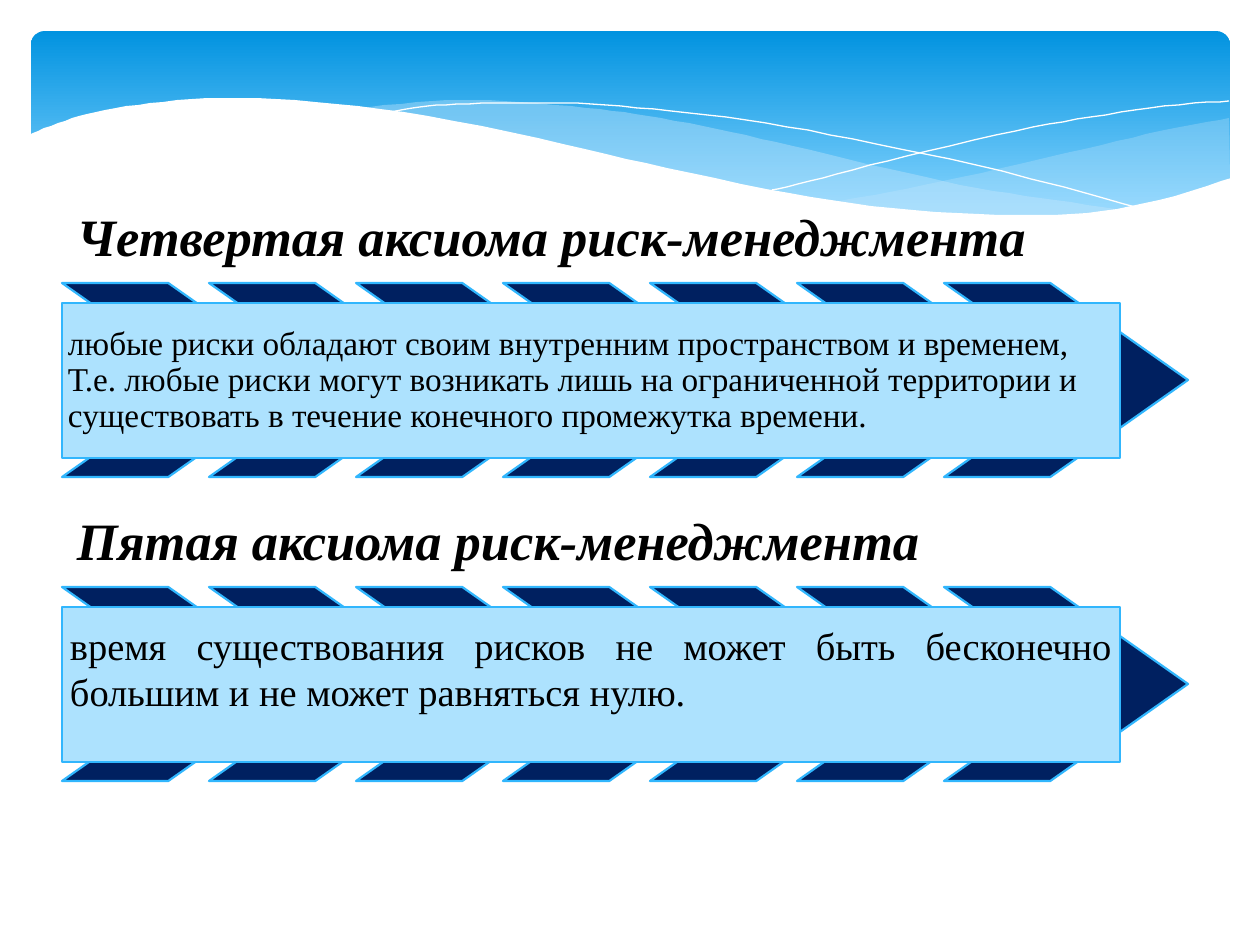
from lxml.etree import SubElement
from pptx import Presentation
from pptx.dml.color import RGBColor
from pptx.enum.shapes import MSO_SHAPE as Shape
from pptx.enum.text import MSO_ANCHOR as Anchor, PP_ALIGN as Align
from pptx.oxml.ns import qn
from pptx.util import Pt

EMU_PER_PX = 914400 / 126
FONT = "Times New Roman"
COLORS = {
    "sky_top": "0293E0", "sky_bottom": "83D3FE", "wave": "C6E7FC",
    "white": "FFFFFF", "black": "000000", "navy": "002060",
    "panel": "ADE2FE", "outline": "31B6FD",
}

# Key points of the header curves, in px from the slide's top left corner
RIGHT_WAVE_TOP = [(1229, 118), (1160, 131), (1085, 149), (982, 173), (890, 192), (833, 202)]
RIGHT_WAVE_BOTTOM = [(833, 202), (906, 210), (984, 217), (1052, 217), (1120, 209),
                     (1178, 197), (1230, 178)]
MIDDLE_WAVE_TOP = [(1125, 210), (1055, 200), (977, 188), (890, 169), (793, 146), (717, 129),
                   (648, 116), (586, 108), (503, 101), (433, 101), (360, 108)]
MIDDLE_WAVE_BOTTOM = [(360, 108), (431, 118), (509, 134), (566, 146), (668, 170), (757, 189),
                      (838, 203), (910, 212), (989, 217), (1043, 218), (1125, 210)]
FALLING_LINE = [(389, 113), (413, 108), (457, 104), (524, 103), (591, 104), (671, 111),
                (766, 123), (876, 144), (1002, 171), (1143, 209)]
RISING_LINE = [(772, 190), (823, 178), (907, 156), (1016, 131), (1091, 117), (1164, 106),
               (1229, 101)]
WHITE_WAVE_TOP = [(29, 135), (58, 123), (96, 112), (150, 103), (223, 98), (315, 102),
                  (428, 116), (563, 144), (667, 168), (789, 193), (892, 208), (999, 215),
                  (1087, 213), (1159, 200), (1231, 178)]
WHITE_WAVE_BASE = [(1231, 282), (29, 282)]


def px(length):
    return round(length * EMU_PER_PX)


def color(name):
    return RGBColor.from_string(COLORS[name])


def smooth_curve(points, steps=5):
    """Return points along a Catmull-Rom curve through the given points."""
    padded = [points[0], *points, points[-1]]
    curve = [points[0]]
    for a, b, c, d in zip(padded, padded[1:], padded[2:], padded[3:]):
        for step in range(1, steps + 1):
            t = step / steps
            curve.append(tuple(
                (2 * q + (r - p) * t + (2 * p - 5 * q + 4 * r - s) * t ** 2
                 + (3 * q - p - 3 * r + s) * t ** 3) / 2
                for p, q, r, s in zip(a, b, c, d)))
    return curve


def add_outline(slide, points, close):
    builder = slide.shapes.build_freeform(*points[0], scale=EMU_PER_PX)
    builder.add_line_segments(points[1:], close=close)
    shape = builder.convert_to_shape()
    shape.shadow.inherit = False
    return shape


def add_wave(slide, points, fill, opacity=100):
    wave = add_outline(slide, points, True)
    wave.line.fill.background()
    wave.fill.solid()
    wave.fill.fore_color.rgb = color(fill)
    if opacity < 100:
        fill_color = wave.fill._xPr.find(qn("a:solidFill"))[0]
        SubElement(fill_color, qn("a:alpha"), val=str(opacity * 1000))


def add_hairline(slide, points):
    hairline = add_outline(slide, smooth_curve(points), False)
    hairline.fill.background()
    hairline.line.color.rgb = color("white")
    hairline.line.width = Pt(0)


def add_header(slide, left, top, width, height):
    sky = slide.shapes.add_shape(Shape.ROUNDED_RECTANGLE,
                                 px(left), px(top), px(width), px(height))
    sky.adjustments[0] = 0.07
    sky.shadow.inherit = False
    sky.line.fill.background()
    sky.fill.gradient()
    sky.fill.gradient_angle = 270
    stops = zip(sky.fill.gradient_stops, ("sky_top", "sky_bottom"), (0, 0.9))
    for stop, name, position in stops:
        stop.color.rgb = color(name)
        stop.position = position

    add_wave(slide, smooth_curve(RIGHT_WAVE_TOP) + smooth_curve(RIGHT_WAVE_BOTTOM), "wave", 29)
    add_wave(slide, smooth_curve(MIDDLE_WAVE_TOP) + smooth_curve(MIDDLE_WAVE_BOTTOM), "wave", 40)
    add_hairline(slide, FALLING_LINE)
    add_hairline(slide, RISING_LINE)
    add_wave(slide, smooth_curve(WHITE_WAVE_TOP) + WHITE_WAVE_BASE, "white")


def add_block(slide, kind, left, top, width, height, fill):
    block = slide.shapes.add_shape(kind, px(left), px(top), px(width), px(height))
    block.shadow.inherit = False
    block.fill.solid()
    block.fill.fore_color.rgb = color(fill)
    block.line.color.rgb = color("outline")
    block.line.width = Pt(1.25)
    return block


def write_text(shape, text, size, anchor, inset, extra_bottom=0,
               align=Align.LEFT, spacing=0.9, emphasis=False):
    frame = shape.text_frame
    frame.word_wrap = True
    frame.vertical_anchor = anchor
    frame.margin_left = frame.margin_right = frame.margin_top = px(inset)
    frame.margin_bottom = px(inset + extra_bottom)
    paragraph = frame.paragraphs[0]
    paragraph.alignment = align
    paragraph.line_spacing = spacing
    run = paragraph.add_run()
    run.text = text
    run.font.name = FONT
    run.font.size = Pt(size)
    run.font.bold = run.font.italic = emphasis
    run.font.color.rgb = color("black")


def add_axiom(slide, left, top, title, statement, **statement_style):
    """Place a title above a row of chevrons crossed by a text panel."""
    heading = slide.shapes.add_textbox(px(left), px(top), px(1045), px(94))
    write_text(heading, title, 30, Anchor.BOTTOM, 15, emphasis=True)
    for index in range(7):
        chevron = add_block(slide, Shape.CHEVRON, left + index * 147, top + 94,
                            244, 194, "navy")
        chevron.adjustments[0] = 0.71
    panel = add_block(slide, Shape.RECTANGLE, left, top + 114, 1058, 155, "panel")
    write_text(panel, statement, anchor=Anchor.MIDDLE, **statement_style)


def main():
    presentation = Presentation()
    presentation.slide_width = px(1260)
    presentation.slide_height = px(945)
    slide = presentation.slides.add_slide(presentation.slide_layouts[6])
    add_header(slide, 31, 31, 1199, 197)
    add_axiom(slide, 62, 189, "Четвертая аксиома риск-менеджмента",
              "любые риски обладают своим внутренним пространством и временем, "
              "Т.е. любые риски могут возникать лишь на ограниченной территории "
              "и существовать в течение конечного промежутка времени.",
              size=19, inset=6)
    add_axiom(slide, 62, 493, "Пятая аксиома риск-менеджмента",
              "время существования рисков не может быть бесконечно большим "
              "и не может равняться нулю.",
              size=22, inset=8, extra_bottom=33, align=Align.JUSTIFY, spacing=1.0)
    presentation.save("out.pptx")


if __name__ == "__main__":
    main()
